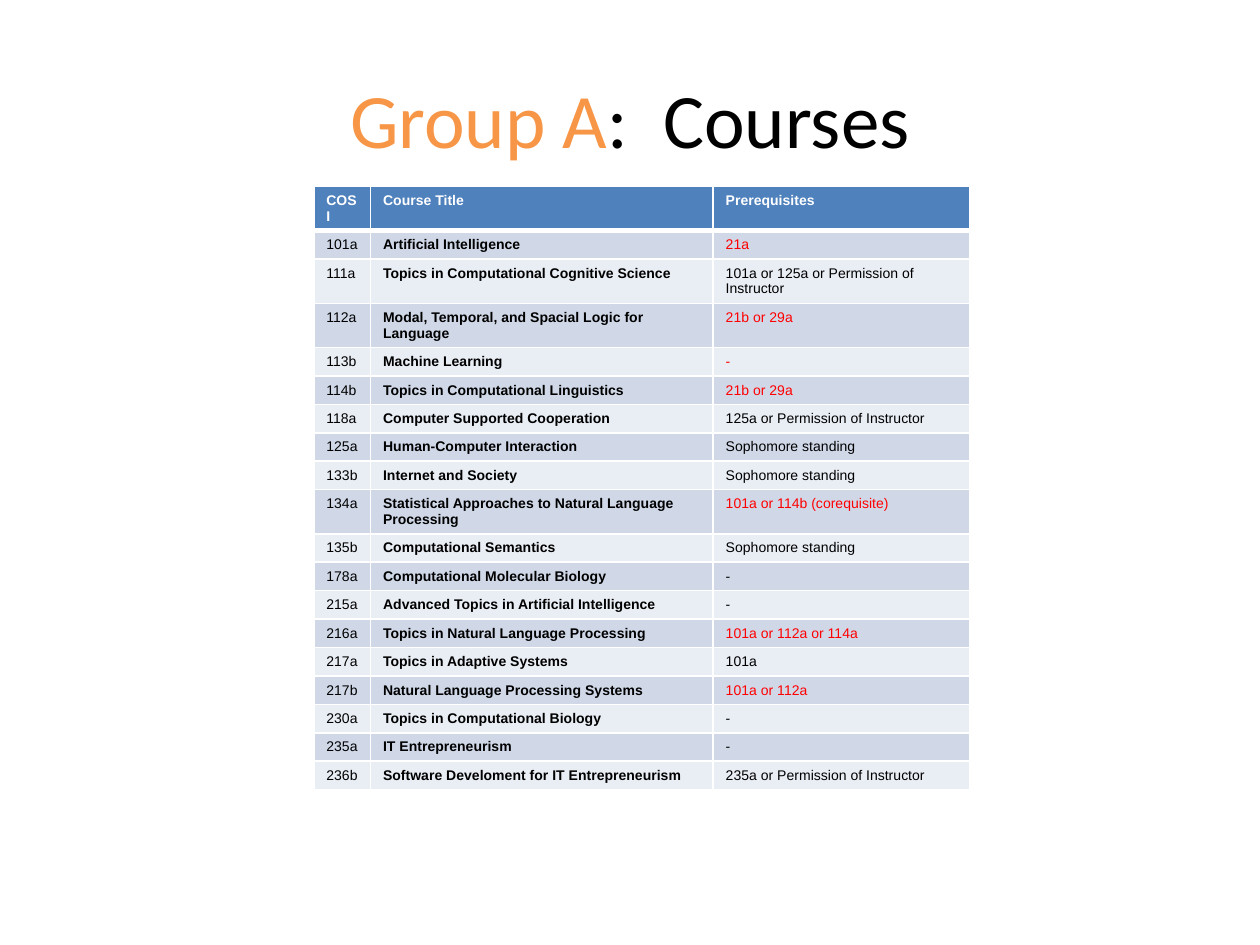
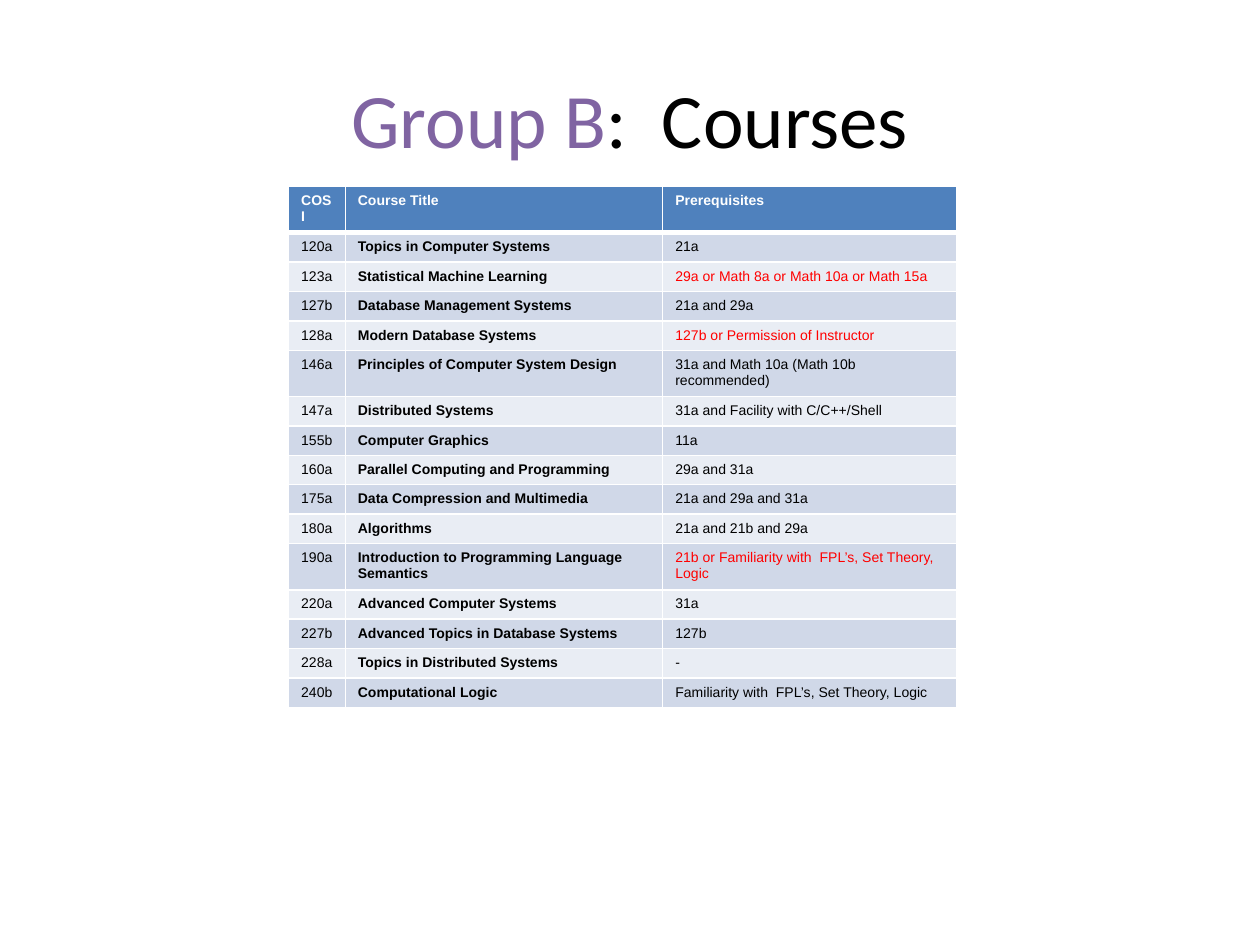
from dataclasses import dataclass

from lxml.etree import SubElement
from pptx import Presentation
from pptx.dml.color import RGBColor
from pptx.enum.text import MSO_ANCHOR, PP_ALIGN
from pptx.oxml.ns import qn
from pptx.util import Inches, Pt


@dataclass(frozen=True)
class Theme:
    title_font: str = "Calibri"
    table_font: str = "Arial"
    title_size: int = 44
    table_size: int = 8
    text: str = "000000"
    changed: str = "FF0000"
    header: str = "4F81BD"
    header_text: str = "FFFFFF"
    border: str = "FFFFFF"
    bands: tuple = ("D0D8E8", "E9EDF4")
    line: int = 1
    header_line: int = 3


THEME = Theme()
WIDTH, HEIGHT = Inches(10), Inches(7.5)
TITLE_BOX = (0.05, 0.04, 0.9, 0.17)
TABLE_TOP = 1.48 / 7.5
ROW_SHARE = 0.22 / 7.5
HEADINGS = ("COSI", "Course Title", "Prerequisites")

GROUPS = [
    {
        "name": "Group A",
        "accent": "F79646",
        "left": 0.249,
        "columns": (0.045, 0.272, 0.204),
        "changed": {"101a", "112a", "113b", "114b", "134a", "216a", "217b"},
        "courses": [
            ("101a", "Artificial Intelligence", "21a"),
            ("111a", "Topics in Computational Cognitive Science", "101a or 125a or Permission of Instructor"),
            ("112a", "Modal, Temporal, and Spacial Logic for Language", "21b or 29a"),
            ("113b", "Machine Learning", "-"),
            ("114b", "Topics in Computational Linguistics", "21b or 29a"),
            ("118a", "Computer Supported Cooperation", "125a or Permission of Instructor"),
            ("125a", "Human-Computer Interaction", "Sophomore standing"),
            ("133b", "Internet and Society", "Sophomore standing"),
            ("134a", "Statistical Approaches to Natural Language Processing", "101a or 114b (corequisite)"),
            ("135b", "Computational Semantics", "Sophomore standing"),
            ("178a", "Computational Molecular Biology", "-"),
            ("215a", "Advanced Topics in Artificial Intelligence", "-"),
            ("216a", "Topics in Natural Language Processing", "101a or 112a or 114a"),
            ("217a", "Topics in Adaptive Systems", "101a"),
            ("217b", "Natural Language Processing Systems", "101a or 112a"),
            ("230a", "Topics in Computational Biology", "-"),
            ("235a", "IT Entrepreneurism", "-"),
            ("236b", "Software Develoment for IT Entrepreneurism", "235a or Permission of Instructor"),
        ],
    },
    {
        "name": "Group B",
        "accent": "8064A2",
        "left": 0.229,
        "columns": (0.045, 0.252, 0.233),
        "changed": {"123a", "128a", "190a"},
        "courses": [
            ("120a", "Topics in Computer Systems", "21a"),
            ("123a", "Statistical Machine Learning", "29a or Math 8a or Math 10a or Math 15a"),
            ("127b", "Database Management Systems", "21a and 29a"),
            ("128a", "Modern Database Systems", "127b or Permission of Instructor"),
            ("146a", "Principles of Computer System Design", "31a and Math 10a (Math 10b recommended)"),
            ("147a", "Distributed Systems", "31a and Facility with C/C++/Shell"),
            ("155b", "Computer Graphics", "11a"),
            ("160a", "Parallel Computing and Programming", "29a and 31a"),
            ("175a", "Data Compression and Multimedia", "21a and 29a and 31a"),
            ("180a", "Algorithms", "21a and 21b and 29a"),
            ("190a", "Introduction to Programming Language Semantics",
             "21b or Familiarity with  FPL’s, Set Theory, Logic"),
            ("220a", "Advanced Computer Systems", "31a"),
            ("227b", "Advanced Topics in Database Systems", "127b"),
            ("228a", "Topics in Distributed Systems", "-"),
            ("240b", "Computational Logic", "Familiarity with  FPL’s, Set Theory, Logic"),
        ],
    },
]


def across(share):
    return round(WIDTH * share)


def down(share):
    return round(HEIGHT * share)


def add_run(p, text, color, **formats):
    r = p.add_run()
    r.text = text
    for name, value in formats.items():
        setattr(r.font, name, value)
    r.font.color.rgb = RGBColor.from_string(color)


def add_title(s, name, accent):
    x, y, w, h = TITLE_BOX
    tf = s.shapes.add_textbox(across(x), down(y), across(w), down(h)).text_frame
    tf.word_wrap = True
    tf.vertical_anchor = MSO_ANCHOR.MIDDLE
    p = tf.paragraphs[0]
    p.alignment = PP_ALIGN.CENTER
    for text, color in ((name, accent), (":  Courses", THEME.text)):
        add_run(p, text, color, name=THEME.title_font, size=Pt(THEME.title_size))


def set_borders(cell, row):
    tc_pr = cell._tc.get_or_add_tcPr()
    top = THEME.header_line if row == 1 else THEME.line
    bottom = THEME.header_line if row == 0 else THEME.line
    widths = {"lnL": THEME.line, "lnR": THEME.line, "lnT": top, "lnB": bottom}
    for side, width in widths.items():
        ln = SubElement(tc_pr, qn(f"a:{side}"), w=str(Pt(width)))
        fill = SubElement(ln, qn("a:solidFill"))
        SubElement(fill, qn("a:srgbClr"), val=THEME.border)


def fill_cell(cell, row, text, fill, color, bold):
    set_borders(cell, row)
    cell.fill.solid()
    cell.fill.fore_color.rgb = RGBColor.from_string(fill)
    add_run(cell.text_frame.paragraphs[0], text, color,
            name=THEME.table_font, size=Pt(THEME.table_size), bold=bold)


def add_course_table(s, left, columns, courses, changed):
    rows = [HEADINGS, *courses]
    table = s.shapes.add_table(
        len(rows), len(columns), across(left), down(TABLE_TOP),
        across(sum(columns)), down(ROW_SHARE * len(rows))).table
    for column, share in zip(table.columns, columns):
        column.width = across(share)
    for i, values in enumerate(rows):
        for j, text in enumerate(values):
            if i == 0:
                fill, color, bold = THEME.header, THEME.header_text, True
            else:
                fill = THEME.bands[(i - 1) % 2]
                color = THEME.changed if j == 2 and values[0] in changed else THEME.text
                bold = j == 1
            fill_cell(table.cell(i, j), i, text, fill, color, bold)


def main():
    prs = Presentation()
    prs.slide_width, prs.slide_height = WIDTH, HEIGHT
    for group in GROUPS:
        s = prs.slides.add_slide(prs.slide_layouts[6])
        add_course_table(s, group["left"], group["columns"], group["courses"], group["changed"])
        add_title(s, group["name"], group["accent"])
    prs.save("out.pptx")


if __name__ == "__main__":
    main()
